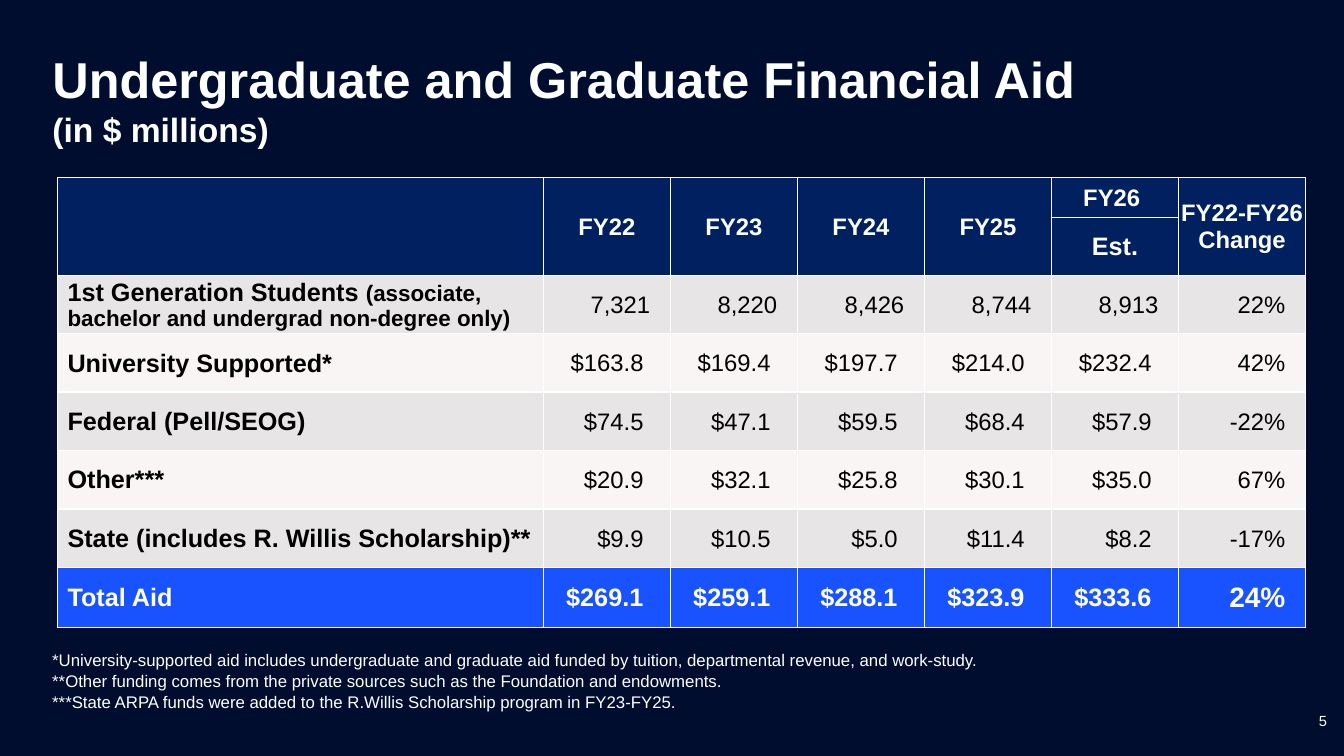
from dataclasses import dataclass

from lxml.etree import SubElement
from pptx import Presentation
from pptx.dml.color import RGBColor
from pptx.enum.text import MSO_ANCHOR as Anchor, PP_ALIGN as Align
from pptx.oxml.ns import qn
from pptx.util import Inches, Pt

COLORS = {
    "background": "000D2F",
    "white": "FEFFFF",
    "black": "000000",
    "header": "002060",
    "dark_band": "E7E5E5",
    "light_band": "F9F5F5",
    "total": "1853FF",
}
YEARS = ["FY22", "FY23", "FY24", "FY25", "FY26 "]
FOOTNOTES = [
    "*University-supported aid includes undergraduate and graduate aid funded by "
    "tuition, departmental revenue, and work-study.",
    "**Other funding comes from the private sources such as the Foundation and endowments.",
    "***State ARPA funds were added to the R.Willis Scholarship program in FY23-FY25.",
]
HEADER_ROWS = 2


@dataclass
class AidRow:
    label: str
    values: list[str]
    change: str
    note: str = ""


@dataclass
class CellStyle:
    fill: str
    color: str = "white"
    size: float = 17
    bold: bool = True
    align: Align = Align.CENTER
    left: float = 0.01
    right: float = 0.01


AID_ROWS = [
    AidRow("1st Generation Students ", ["7,321", "8,220", "8,426", "8,744", "8,913"], "22%",
           "(associate, bachelor and undergrad non-degree only)"),
    AidRow("University Supported*",
           ["$163.8 ", "$169.4 ", "$197.7 ", "$214.0 ", "$232.4 "], "42%"),
    AidRow("Federal (Pell/SEOG)",
           ["$74.5 ", "$47.1 ", "$59.5 ", "$68.4 ", "$57.9 "], "-22%"),
    AidRow("Other***", ["$20.9 ", "$32.1 ", "$25.8 ", "$30.1 ", "$35.0 "], "67%"),
    AidRow("State (includes R. Willis Scholarship)**",
           ["$9.9 ", "$10.5 ", "$5.0 ", "$11.4 ", "$8.2 "], "-17%"),
    AidRow("Total Aid",
           ["$269.1 ", "$259.1 ", "$288.1 ", "$323.9 ", "$333.6 "], "24%"),
]


def rgb(name: str) -> RGBColor:
    return RGBColor.from_string(COLORS[name])


def set_font(font, size: float, color: str = "white", bold: bool = False) -> None:
    font.name = "Arial"
    font.size = Pt(size)
    font.bold = bold
    font.color.rgb = rgb(color)


def add_borders(cell) -> None:
    properties = cell._tc.get_or_add_tcPr()
    for position, side in enumerate(("lnL", "lnR", "lnT", "lnB")):
        line = SubElement(properties, qn(f"a:{side}"), w=str(Pt(1)))
        fill = SubElement(line, qn("a:solidFill"))
        SubElement(fill, qn("a:srgbClr"), val=COLORS["white"])
        properties.insert(position, line)


def format_cell(cell, text: str, style: CellStyle, note: str = "") -> None:
    cell.fill.solid()
    cell.fill.fore_color.rgb = rgb(style.fill)
    add_borders(cell)
    cell.vertical_anchor = Anchor.MIDDLE
    cell.margin_left, cell.margin_right = Inches(style.left), Inches(style.right)
    cell.margin_top, cell.margin_bottom = Inches(0.01), 0
    para = cell.text_frame.paragraphs[0]
    para.alignment = style.align
    set_font(para.font, style.size, style.color, style.bold)
    if text:
        para.add_run().text = text
    if note:
        span = para.add_run()
        span.text = note
        span.font.size = Pt(16)


def add_text(slide, left: float, top: float, width: float, height: float,
             lines: list[str], size: float, align: Align = Align.LEFT,
             anchor: Anchor = Anchor.TOP, spacing: float = 1.0) -> None:
    box = slide.shapes.add_textbox(Inches(left), Inches(top), Inches(width), Inches(height))
    frame = box.text_frame
    frame.word_wrap = True
    frame.vertical_anchor = anchor
    frame.text = "\n".join(lines)
    for para in frame.paragraphs:
        para.alignment = align
        para.line_spacing = spacing
        set_font(para.font, size)


def add_title(slide) -> None:
    title = slide.shapes.title
    title.left, title.top = Inches(0.42), Inches(0.42)
    title.width, title.height = Inches(12.54), Inches(1.11)
    frame = title.text_frame
    frame.word_wrap = True
    frame.vertical_anchor = Anchor.BOTTOM
    frame.text = "Undergraduate and Graduate Financial Aid\v(in $ millions)"
    para = frame.paragraphs[0]
    para.alignment = Align.LEFT
    para.line_spacing = 1.0
    set_font(para.font, 36, bold=True)
    para.runs[1].font.size = Pt(24)


def add_aid_table(slide) -> None:
    column_widths = [4.82] + [1.26] * 6
    row_heights = [0.4, 0.57] + [0.58] * 5 + [0.6]
    table = slide.shapes.add_table(
        len(row_heights), len(column_widths), Inches(0.57), Inches(1.76),
        Inches(sum(column_widths)), Inches(sum(row_heights))).table
    for column, width in zip(table.columns, column_widths):
        column.width = Inches(width)
    for row, height in zip(table.rows, row_heights):
        row.height = Inches(height)

    # Header: every column but FY26 spans both rows
    header = CellStyle("header")
    estimate_column = len(YEARS)
    for column, text in enumerate(["", *YEARS, "FY22-FY26 Change"]):
        format_cell(table.cell(0, column), text, header)
        if column == estimate_column:
            format_cell(table.cell(1, column), "Est.", CellStyle("header", size=18))
        else:
            format_cell(table.cell(1, column), "", header)
            table.cell(0, column).merge(table.cell(1, column))

    # Aid rows: alternating bands, then the total
    for index, aid in enumerate(AID_ROWS):
        is_total = aid is AID_ROWS[-1]
        fill = "total" if is_total else ("dark_band", "light_band")[index % 2]
        color = "white" if is_total else "black"
        label = CellStyle(fill, color, 18, True, Align.LEFT, left=0.1)
        value = CellStyle(fill, color, 18 if is_total else 17, is_total, Align.RIGHT, right=0.2)
        change = CellStyle(fill, color, 20 if is_total else 17, is_total, Align.RIGHT, right=0.2)
        row = index + HEADER_ROWS
        format_cell(table.cell(row, 0), aid.label, label, aid.note)
        for column, text in enumerate(aid.values, start=1):
            format_cell(table.cell(row, column), text, value)
        format_cell(table.cell(row, len(column_widths) - 1), aid.change, change)


def main() -> None:
    deck = Presentation()
    deck.slide_width, deck.slide_height = Inches(13.33), Inches(7.5)
    page = deck.slides.add_slide(deck.slide_layouts[5])
    page.background.fill.solid()
    page.background.fill.fore_color.rgb = rgb("background")

    add_title(page)
    add_aid_table(page)
    # Footnotes and page number
    add_text(page, 0.42, 6.38, 9.9, 0.91, FOOTNOTES, 12, spacing=1.06)
    add_text(page, 10.26, 6.95, 3, 0.4, ["5"], 10.5, Align.RIGHT, Anchor.MIDDLE)
    deck.save("out.pptx")


if __name__ == "__main__":
    main()
